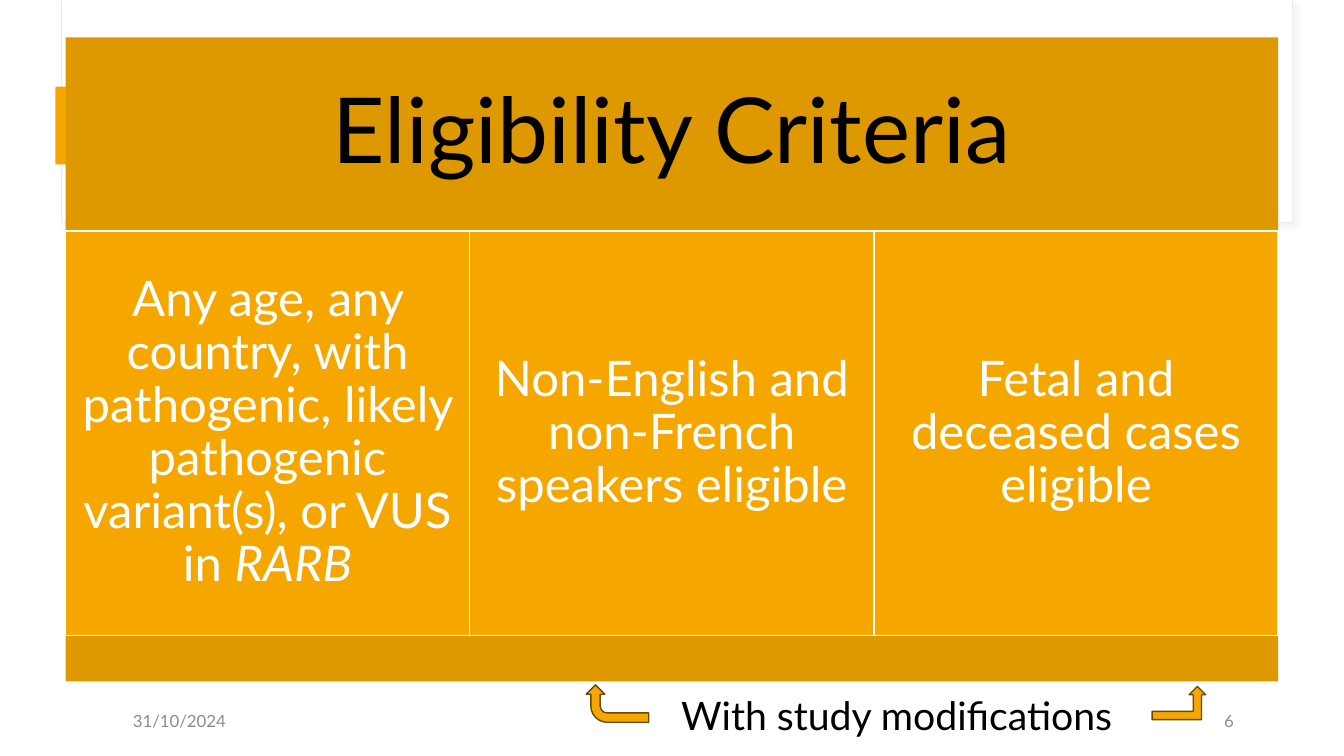
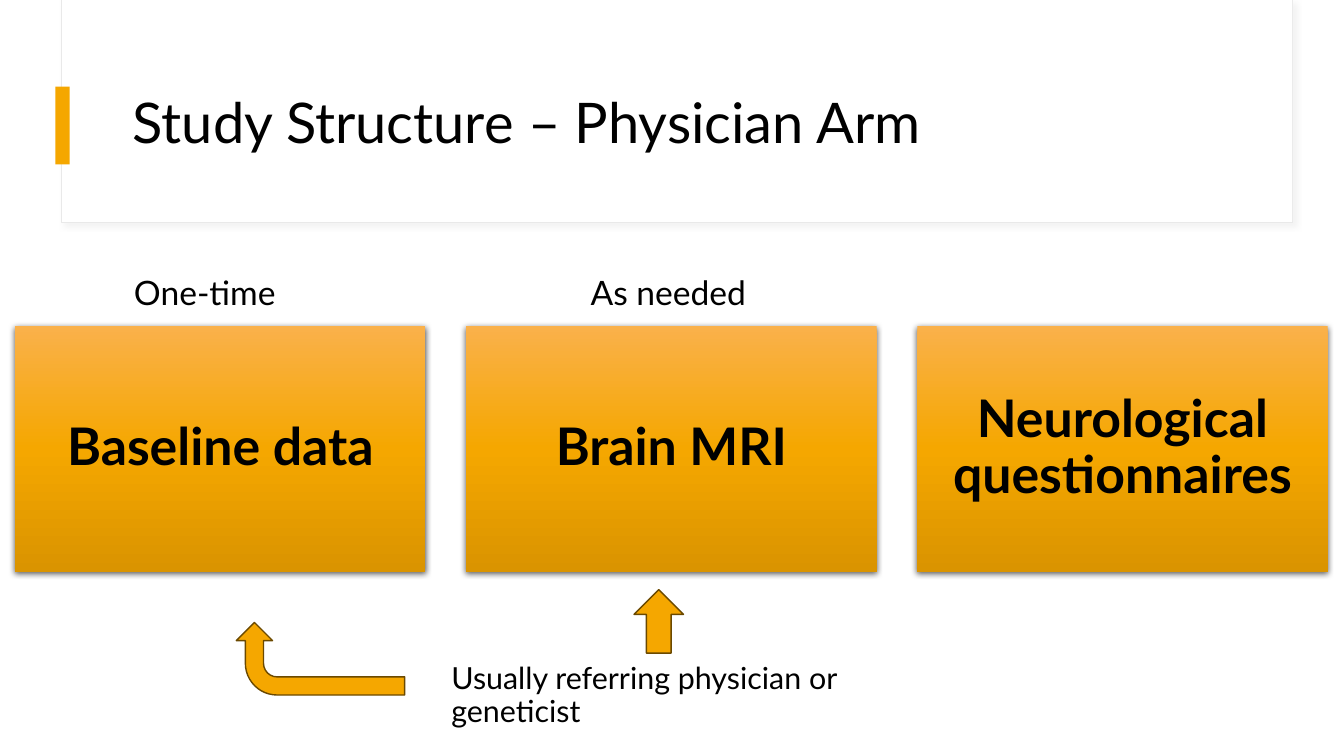
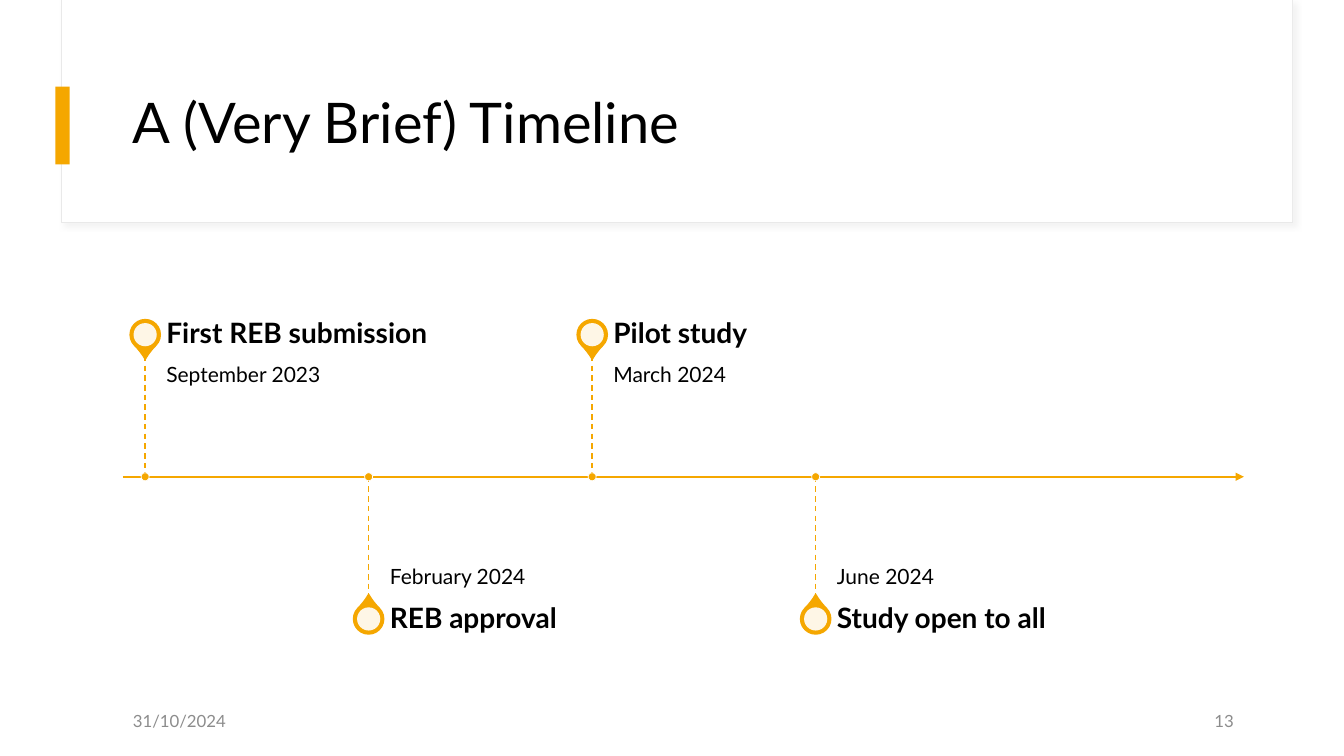
"""Build three study slides: eligibility criteria, physician arm and timeline."""
import copy
import dataclasses

import lxml.etree
import pptx
import pptx.dml.color
import pptx.enum.dml
import pptx.enum.shapes
import pptx.enum.text
import pptx.oxml.ns
import pptx.util

SHAPE = pptx.enum.shapes.MSO_SHAPE
ALIGN = pptx.enum.text.PP_ALIGN
ANCHOR = pptx.enum.text.MSO_ANCHOR
qn = pptx.oxml.ns.qn

WIDTH = pptx.util.Inches(13.33)
HEIGHT = pptx.util.Inches(7.5)


@dataclasses.dataclass(frozen=True)
class Theme:
    font: str = "Lato"
    accent: str = "F5A700"
    band: str = "DE9800"
    arrow_line: str = "6B4900"
    text: str = "000000"
    light: str = "FFFFFF"
    muted: str = "8C8C8C"
    card_line: str = "E9E9E9"
    card_shadow: tuple = ("D9D9D9", 30, 4, 3, 45)
    box_shadow: tuple = ("000000", 63, 4.5, 1.5, 90)
    box_gradient: tuple = ("FAB14B", "F5A700", "DA9400")
    banner_size: float = 65
    title_size: float = 40
    box_size: float = 37
    criterion_size: float = 35
    note_size: float = 28
    label_size: float = 24
    source_size: float = 21.7
    event_size: float = 20
    date_size: float = 15
    footer_size: float = 12


THEME = Theme()
CARD_INSETS = (0.15,) * 4


def across(share):
    return round(WIDTH * share / 100)


def down(share):
    return round(HEIGHT * share / 100)


def place(box):
    left, top, width, height = box
    return across(left), down(top), across(width), down(height)


def columns(left, width, pitch, top, height, count=3):
    return [(left + pitch * index, top, width, height) for index in range(count)]


def color(value):
    return pptx.dml.color.RGBColor.from_string(value)


def add_shadow(shape, shadow):
    value, alpha, blur, distance, angle = shadow
    effects = shape.element.spPr.find(qn("a:effectLst"))
    outer = lxml.etree.SubElement(
        effects, qn("a:outerShdw"), blurRad=str(pptx.util.Pt(blur)),
        dist=str(pptx.util.Pt(distance)), dir=str(angle * 60000),
        algn="ctr", rotWithShape="0")
    tint = lxml.etree.SubElement(outer, qn("a:srgbClr"), val=value)
    lxml.etree.SubElement(tint, qn("a:alpha"), val=str(alpha * 1000))


def set_gradient(shape, values):
    shape.fill.gradient()
    shape.fill.gradient_angle = 270
    stop_list = shape.element.spPr.find(".//" + qn("a:gsLst"))
    stop_list.append(copy.deepcopy(stop_list[0]))
    for index, (stop, value) in enumerate(zip(shape.fill.gradient_stops, values)):
        stop.position = index / (len(values) - 1)
        stop.color.rgb = color(value)


def add_shape(slide, kind, box, fill=THEME.accent, line=None, line_width=1,
              rotation=0, shadow=None):
    shape = slide.shapes.add_shape(kind, *place(box))
    shape.rotation = rotation
    if isinstance(fill, tuple):
        set_gradient(shape, fill)
    else:
        shape.fill.solid()
        shape.fill.fore_color.rgb = color(fill)
    if line:
        shape.line.color.rgb = color(line)
        shape.line.width = pptx.util.Pt(line_width)
    else:
        shape.line.fill.background()
    shape.shadow.inherit = False
    if shadow:
        add_shadow(shape, shadow)
    return shape


def write(shape, text, size, value=THEME.text, bold=False, italic_end="",
          align=ALIGN.LEFT, anchor=ANCHOR.TOP, spacing=0.9, before=0,
          insets=(0.1, 0.05, 0.1, 0.05)):
    frame = shape.text_frame
    frame.word_wrap = True
    frame.vertical_anchor = anchor
    (frame.margin_left, frame.margin_top, frame.margin_right,
     frame.margin_bottom) = map(pptx.util.Inches, insets)
    paragraph = frame.paragraphs[0]
    paragraph.alignment = align
    paragraph.line_spacing = spacing
    paragraph.space_before = pptx.util.Pt(before)
    paragraph.font.name = THEME.font
    paragraph.font.size = pptx.util.Pt(size)
    paragraph.font.bold = bold
    paragraph.font.color.rgb = color(value)
    paragraph.add_run().text = text
    if italic_end:
        run = paragraph.add_run()
        run.text = italic_end
        run.font.italic = True


def add_text(slide, box, text, size, **style):
    write(slide.shapes.add_textbox(*place(box)), text, size, **style)


def add_card(slide, box, text, size, insets=CARD_INSETS, value=THEME.text,
             bold=False, italic_end="", **look):
    shape = add_shape(slide, SHAPE.RECTANGLE, box, **look)
    write(shape, text, size, value=value, bold=bold, italic_end=italic_end,
          align=ALIGN.CENTER, anchor=ANCHOR.MIDDLE, insets=insets)


def add_arrow(slide, kind, box, rotation=0):
    add_shape(slide, kind, box, line=THEME.arrow_line, rotation=rotation)


def add_circle(slide, kind, x, y, diameter, **look):
    width = diameter * HEIGHT / WIDTH
    box = (x - width / 2, y - diameter / 2, width, diameter)
    return add_shape(slide, kind, box, **look)


def add_line(slide, start, end, width, dashed=False, arrow=False):
    connector = slide.shapes.add_connector(
        pptx.enum.shapes.MSO_CONNECTOR.STRAIGHT,
        across(start[0]), down(start[1]), across(end[0]), down(end[1]))
    connector.line.color.rgb = color(THEME.accent)
    connector.line.width = pptx.util.Pt(width)
    if dashed:
        connector.line.dash_style = pptx.enum.dml.MSO_LINE.DASH
    properties = connector.element.spPr
    if arrow:
        lxml.etree.SubElement(
            properties.find(qn("a:ln")), qn("a:tailEnd"), type="triangle")
    lxml.etree.SubElement(properties, qn("a:effectLst"))


def add_slide(presentation, title=None, number=None):
    slide = presentation.slides.add_slide(presentation.slide_layouts[6])
    add_shape(slide, SHAPE.RECTANGLE, (4.58, 0, 91.57, 29.47), fill=THEME.light,
              line=THEME.card_line, line_width=0.75, shadow=THEME.card_shadow)
    add_shape(slide, SHAPE.RECTANGLE, (4.65, 0, 91.5, 29.33), fill=THEME.light)
    add_shape(slide, SHAPE.RECTANGLE, (4.13, 11.47, 1.05, 10.27))
    if title:
        add_text(slide, (9.15, 8, 83.4, 17.2), title, THEME.title_size,
                 anchor=ANCHOR.MIDDLE)
    if number:
        for left, text, align in ((9.15, "31/10/2024", ALIGN.LEFT),
                                  (70.05, number, ALIGN.RIGHT)):
            add_text(slide, (left, 92.67, 22.5, 5.33), text, THEME.footer_size,
                     value=THEME.muted, align=align, anchor=ANCHOR.MIDDLE, spacing=1)
    return slide


def add_event(slide, x, axis, name, date, above):
    stem, label, pin_size = 16, 5.6, 4
    side = -1 if above else 1
    tip = axis + side * stem
    pin = tip + side * label / 2
    text_left, text_width = x + 1.58, 27.75
    drop = add_circle(slide, SHAPE.TEAR, x, pin, pin_size, line=THEME.accent,
                      rotation=135 if above else 315)
    drop.adjustments[0] = 1.15
    center = add_circle(slide, SHAPE.OVAL, x, pin, 3.07, fill=THEME.light)
    tint = center.element.spPr.find(".//" + qn("a:srgbClr"))
    lxml.etree.SubElement(tint, qn("a:alpha"), val="90000")
    add_text(slide, (text_left, min(axis, tip), text_width, stem), date,
             THEME.date_size, anchor=ANCHOR.TOP if above else ANCHOR.BOTTOM,
             insets=(0, 0.1, 0.1, 0.16) if above else (0, 0.16, 0, 0.1))
    add_text(slide, (text_left, pin - label / 2, text_width, label), name,
             THEME.event_size, bold=True, anchor=ANCHOR.MIDDLE,
             insets=(0, 0, 0.14, 0))
    add_line(slide, (x, min(axis, tip)), (x, max(axis, tip)), 1, dashed=True)
    add_circle(slide, SHAPE.OVAL, x, axis, 1.07, line=THEME.light, line_width=0.5)


def build_eligibility(presentation):
    slide = add_slide(presentation, number="6")
    left, width = 4.88, 90.22
    add_text(slide, (49.95, 90.13, 35.78, 10.13), "With study modifications",
             THEME.note_size, spacing=1.1, before=10)
    add_card(slide, (left, 4.93, width, 25.6), "Eligibility Criteria",
             THEME.banner_size, insets=(0.27,) * 4, fill=THEME.band)
    criteria = (
        ("Any age, any country, with pathogenic, likely pathogenic variant(s), or VUS in ",
         "RARB"),
        ("Non-English and non-French speakers eligible", ""),
        ("Fetal and deceased cases eligible", ""),
    )
    boxes = columns(left, width / 3, width / 3, 30.53, 53.6)
    for box, (text, gene) in zip(boxes, criteria):
        add_card(slide, box, text, THEME.criterion_size, value=THEME.light,
                 italic_end=gene, line=THEME.light)
    add_shape(slide, SHAPE.RECTANGLE, (left, 84.13, width, 6), fill=THEME.band)
    add_arrow(slide, SHAPE.BENT_ARROW, (44.55, 88.93, 2.78, 8.27), rotation=270)
    add_arrow(slide, SHAPE.BENT_UP_ARROW, (85.73, 90.8, 3.98, 4.4))


def build_physician_arm(presentation):
    slide = add_slide(presentation, title="Study Structure – Physician Arm")
    names = ("Baseline data", "Brain MRI", "Neurological questionnaires")
    for box, name in zip(columns(1.13, 30.53, 33.56, 43.07, 32.53), names):
        add_card(slide, box, name, THEME.box_size, bold=True,
                 fill=THEME.box_gradient, shadow=THEME.box_shadow)
    add_arrow(slide, SHAPE.BENT_ARROW, (21.15, 76, 5.4, 22.27), rotation=270)
    add_text(slide, (32.85, 87.07, 35.78, 10.13),
             "Usually referring physician or geneticist", THEME.source_size, before=10)
    add_arrow(slide, SHAPE.UP_ARROW, (47.18, 78, 3.68, 8.4))
    for left, text in ((9.23, "One-time"), (43.2, "As needed")):
        add_text(slide, (left, 35.33, 17.63, 6.67), text, THEME.label_size, spacing=1)


def build_timeline(presentation):
    slide = add_slide(presentation, title="A (Very Brief) Timeline", number="13")
    axis, first, pitch = 63.07, 10.8, 16.63
    add_line(slide, (9.15, axis), (92.55, axis), 1.5, arrow=True)
    events = (
        ("First REB submission", "September 2023"),
        ("REB approval", "February 2024"),
        ("Pilot study", "March 2024"),
        ("Study open to all", "June 2024"),
    )
    for index, (name, date) in enumerate(events):
        add_event(slide, first + pitch * index, axis, name, date, above=index % 2 == 0)


def main():
    presentation = pptx.Presentation()
    presentation.slide_width = WIDTH
    presentation.slide_height = HEIGHT
    build_eligibility(presentation)
    build_physician_arm(presentation)
    build_timeline(presentation)
    presentation.save("out.pptx")


if __name__ == "__main__":
    main()
